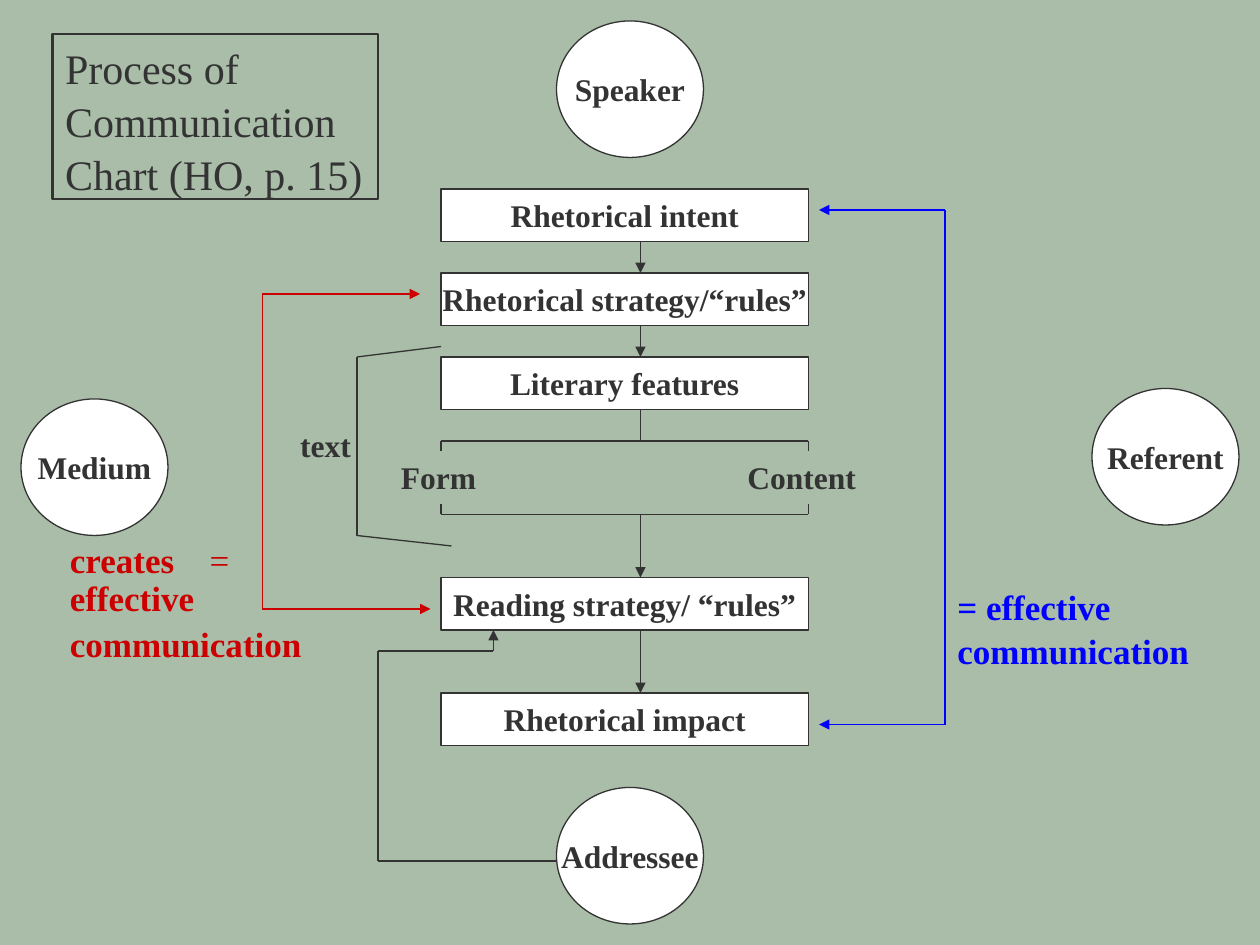
from itertools import pairwise

from lxml import etree
from pptx import Presentation
from pptx import util as u
from pptx.dml.color import RGBColor
from pptx.enum import shapes, text
from pptx.oxml.ns import qn

INK, WHITE, RED, BLUE, SAGE = "333333", "FFFFFF", "CC0000", "0000FF", "A9BDA9"
LEFT, CENTER = text.PP_ALIGN.LEFT, text.PP_ALIGN.CENTER


def color(hex_string):
    return RGBColor.from_string(hex_string)


def grid(units):
    """Length of a number of grid steps, twelve to the inch."""
    return u.Inches(units / 12)


def write(paragraph, words, size=18, bold=True, ink=INK, align=LEFT, spacing=None, before=0):
    paragraph.alignment = align
    paragraph.space_before = u.Pt(before)
    if spacing:
        paragraph.line_spacing = spacing
    run = paragraph.add_run()
    run.text = words
    font = run.font
    font.name, font.size, font.bold = "Times New Roman", u.Pt(size), bold
    font.color.rgb = color(ink)
    return run


class Chart:
    """The current slide and its style; all lengths are grid steps."""

    box_left, box_width, box_height = 42, 35, 5
    circle_width, circle_height = 14, 13

    def __init__(self, presentation):
        self.slide = presentation.slides.add_slide(presentation.slide_layouts[5])
        fill = self.slide.background.fill
        fill.solid()
        fill.fore_color.rgb = color(SAGE)

    def title(self, words, left, top, width, height):
        shape = self.slide.shapes.title
        shape.left, shape.top, shape.width, shape.height = map(grid, (left, top, width, height))
        shape.line.color.rgb, shape.line.width = color(INK), u.Pt(1.5)
        frame = shape.text_frame
        frame.word_wrap, frame.auto_size = True, text.MSO_AUTO_SIZE.NONE
        frame.vertical_anchor = text.MSO_ANCHOR.TOP
        write(frame.paragraphs[0], words, size=24, bold=False, spacing=1.05)

    def node(self, kind, words, left, top, width, height):
        shape = self.slide.shapes.add_shape(kind, *map(grid, (left, top, width, height)))
        shape.shadow.inherit = False
        shape.fill.solid()
        shape.fill.fore_color.rgb = color(WHITE)
        shape.line.color.rgb, shape.line.width = color(INK), u.Pt(0.75)
        frame = shape.text_frame
        frame.word_wrap, frame.vertical_anchor = False, text.MSO_ANCHOR.MIDDLE
        write(frame.paragraphs[0], words, align=CENTER)

    def circle(self, words, left, top):
        self.node(shapes.MSO_SHAPE.OVAL, words, left, top, self.circle_width, self.circle_height)

    def box(self, words, top):
        self.node(shapes.MSO_SHAPE.RECTANGLE, words, self.box_left, top, self.box_width, self.box_height)

    def text_box(self, left, top, width, height):
        frame = self.slide.shapes.add_textbox(*map(grid, (left, top, width, height))).text_frame
        frame.word_wrap = True
        return frame

    def label(self, words, left, top, width, height=4.8, **style):
        write(self.text_box(left, top, width, height).paragraphs[0], words, **style)

    def route(self, *points, ink=INK, start=False, end=False):
        """Straight lines through the points, with arrowheads at the chosen ends."""
        segments = list(pairwise(points))
        for index, (here, there) in enumerate(segments):
            line = self.slide.shapes.add_connector(
                shapes.MSO_CONNECTOR.STRAIGHT, *map(grid, here + there))
            line.line.color.rgb, line.line.width = color(ink), u.Pt(0.75)
            properties = line.line._get_or_add_ln()
            if start and index == 0:
                etree.SubElement(properties, qn("a:headEnd"), type="triangle")
            if end and index == len(segments) - 1:
                etree.SubElement(properties, qn("a:tailEnd"), type="triangle")
            etree.SubElement(line._element.spPr, qn("a:effectLst"))

    def medium_note(self):
        frame = self.text_box(5.47, 52, 25.5, 12.6)
        rows = (("creates\t", 16, 0), ("effective", 12, 10), ("communication", 16, 10))
        for index, (words, spacing, before) in enumerate(rows):
            paragraph = frame.add_paragraph() if index else frame.paragraphs[0]
            if index == 0:
                stops = etree.SubElement(paragraph._p.get_or_add_pPr(), qn("a:tabLst"))
                etree.SubElement(stops, qn("a:tab"), pos=str(u.Inches(1.11)), algn="l")
            style = dict(size=20, ink=RED, spacing=u.Pt(spacing), before=before)
            write(paragraph, words, **style)
            if index == 0:
                write(paragraph, "=", bold=False, **style)


def main():
    presentation = Presentation()
    presentation.slide_width, presentation.slide_height = u.Inches(10), u.Inches(7.5)
    chart = Chart(presentation)
    chart.title("Process of Communication Chart (HO, p. 15)", 5, 3.25, 31, 15.7)

    for words, left, top in (("Speaker", 53, 2), ("Medium", 2, 38),
                             ("Referent", 104, 37), ("Addressee", 53, 75)):
        chart.circle(words, left, top)

    for words, top in (("Rhetorical intent", 18), ("Rhetorical strategy/“rules”", 26),
                       ("Literary features", 34), ("Reading strategy/ “rules”", 55),
                       ("Rhetorical impact", 66)):
        chart.box(words, top)

    middle, left, right = 61, chart.box_left, chart.box_left + chart.box_width
    for top, bottom in ((23, 26), (31, 34), (49, 55), (60, 66)):
        chart.route((middle, top), (middle, bottom), end=True)

    # Form and content: a fork below the features, joined again above reading
    chart.route((middle, 39), (middle, 42))
    for tip, bar in ((43, 42), (48, 49)):
        chart.route((left, tip), (left, bar), (right, bar), (right, tip))
    chart.label("Form", 37, 43, 12)
    chart.label("Content", 70, 43, 13)

    chart.route((42, 33), (34, 34), (34, 51), (43, 52))
    chart.label("text", 26, 40, 10, align=CENTER)

    chart.route((78, 20), (90, 20), (90, 69), (78, 69), ink=BLUE, start=True, end=True)
    chart.label("= effective communication", 90, 55, 35, 9.25, size=20, ink=BLUE, spacing=1.05)

    chart.route((40, 28), (25, 28), (25, 58), (41, 58), ink=RED, start=True, end=True)
    chart.medium_note()

    chart.route((53, 82), (36, 82), (36, 62), (47, 62), (47, 60), end=True)
    presentation.save("out.pptx")


if __name__ == "__main__":
    main()
